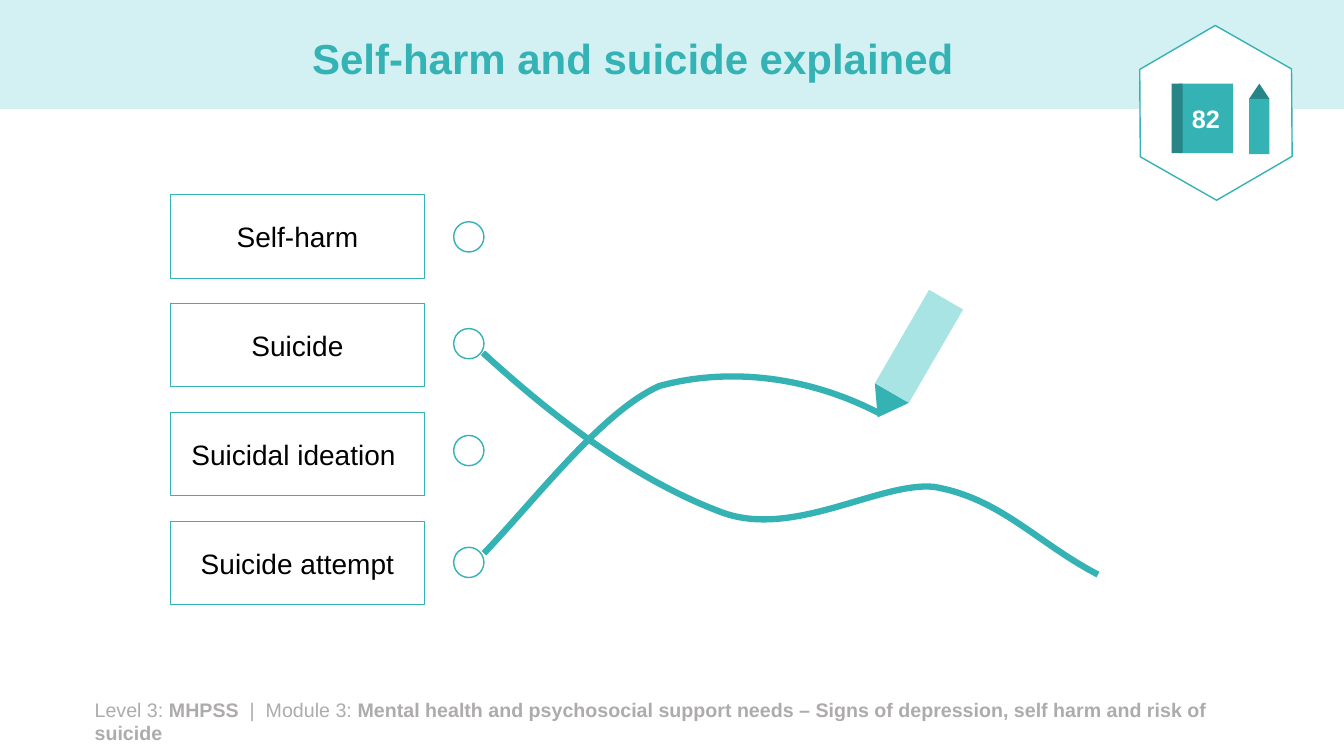
from lxml.etree import SubElement
from pptx import Presentation
from pptx.dml.color import RGBColor
from pptx.enum.shapes import MSO_SHAPE
from pptx.enum.text import MSO_ANCHOR, PP_ALIGN
from pptx.oxml.ns import qn
from pptx.util import Pt

PX = 9144  # 100 px to the inch
TEAL = RGBColor(0x35, 0xB2, 0xB4)
DARK_TEAL = RGBColor(0x27, 0x85, 0x87)
LIGHT_TEAL = RGBColor(0xA9, 0xE4, 0xE5)
PALE_TEAL = RGBColor(0xD3, 0xF1, 0xF2)
GRAY = RGBColor(0xAE, 0xAB, 0xAB)
WHITE = RGBColor(0xFF, 0xFF, 0xFF)
BLACK = RGBColor(0, 0, 0)


def add_outline(container, kind, left, top, width, height, fill=None, line=None, rotation=0):
    """Add a preset shape; line is its width in points, drawn in teal."""
    shape = container.shapes.add_shape(kind, left * PX, top * PX, width * PX, height * PX)
    shape.shadow.inherit = False
    shape.rotation = rotation
    if fill is None:
        shape.fill.background()
    else:
        shape.fill.solid()
        shape.fill.fore_color.rgb = fill
    if line is None:
        shape.line.fill.background()
    else:
        shape.line.color.rgb = TEAL
        shape.line.width = Pt(line)
    return shape


def write_text(shape, *runs, size, color, align=PP_ALIGN.CENTER, anchor=MSO_ANCHOR.MIDDLE, spacing=None):
    """Write (text, bold) runs as one paragraph."""
    frame = shape.text_frame
    frame.word_wrap = True
    frame.vertical_anchor = anchor
    paragraph = frame.paragraphs[0]
    paragraph.alignment = align
    paragraph.line_spacing = spacing
    for text, bold in runs:
        run = paragraph.add_run()
        run.text = text
        run.font.name = "Arial"
        run.font.size = Pt(size)
        run.font.bold = bold
        run.font.color.rgb = color


presentation = Presentation()
presentation.slide_width = 1333 * PX
presentation.slide_height = 750 * PX
slide = presentation.slides.add_slide(presentation.slide_layouts[6])

# Header band, footer and title
add_outline(slide, MSO_SHAPE.RECTANGLE, 0, 0, 1333, 108, fill=PALE_TEAL)
footer = slide.shapes.add_textbox(84 * PX, 687 * PX, 1135 * PX, 57 * PX)
write_text(
    footer,
    ("Level 3: ", False),
    ("MHPSS", True),
    ("  |  Module 3: ", False),
    ("Mental health and psychosocial support needs – Signs of depression, self harm and risk of suicide", True),
    size=14, color=GRAY, align=PP_ALIGN.LEFT, anchor=MSO_ANCHOR.TOP,
)
title = slide.shapes.add_textbox(53 * PX, 13 * PX, 1150 * PX, 95 * PX)
write_text(title, ("Self-harm and suicide explained", True), size=30, color=TEAL, spacing=0.9)

# Terms to match
terms = slide.shapes.add_group_shape()
for row, term in enumerate(["Self-harm", "Suicide", "Suicidal ideation ", "Suicide attempt"]):
    box = add_outline(terms, MSO_SHAPE.RECTANGLE, 169, 193 + 108 * row, 252, 83, line=0.75)
    write_text(box, (term, False), size=20, color=BLACK)

# Drawing pencil
pencil = slide.shapes.add_group_shape()
add_outline(pencil, MSO_SHAPE.ISOSCELES_TRIANGLE, 858, 388, 39, 28, fill=TEAL, rotation=210.1)
add_outline(pencil, MSO_SHAPE.RECTANGLE, 892, 290, 39, 107, fill=LIGHT_TEAL, rotation=210.1)

# Starting points of the matching lines
for top in (220, 326, 432, 543):
    add_outline(slide, MSO_SHAPE.OVAL, 450, top, 30, 30, fill=WHITE, line=1)

# Matching lines: a start, then two control points and an end for each curve
matching_lines = [
    [(479, 350), (560, 424), (636, 478), (715, 508), (786, 535), (872, 478), (926, 483),
     (992, 494), (1029, 539), (1089, 570)],
    [(480, 549), (535, 491), (598, 408), (654, 383), (716, 366), (795, 370), (872, 410)],
]
for start, *points in matching_lines:
    builder = slide.shapes.build_freeform(*start, scale=PX)
    builder.add_line_segments(points, close=False)
    curve = builder.convert_to_shape()
    curve.shadow.inherit = False
    curve.fill.background()
    curve.line.color.rgb = TEAL
    curve.line.width = Pt(4.5)
    outline = next(curve.element.iter(qn("a:path")))
    segments = outline.findall(qn("a:lnTo"))
    for first in range(0, len(segments), 3):
        bezier = SubElement(outline, qn("a:cubicBezTo"))
        for segment in segments[first:first + 3]:
            bezier.append(segment[0])
            outline.remove(segment)

# Page badge with workbook and pencil
badge = slide.shapes.add_group_shape()
hexagon = add_outline(badge, MSO_SHAPE.HEXAGON, 1119, 37, 174, 150, fill=WHITE, line=1, rotation=29.7)
hexagon.adjustments[0] = 0.29
hexagon.adjustments[1] = 1.155
book = add_outline(badge, MSO_SHAPE.RECTANGLE, 1169, 83, 54, 69, fill=TEAL)
write_text(book, ("82", True), size=18, color=WHITE)
add_outline(badge, MSO_SHAPE.RECTANGLE, 1162, 83, 11, 69, fill=DARK_TEAL)
add_outline(badge, MSO_SHAPE.ISOSCELES_TRIANGLE, 1239, 83, 20, 15, fill=DARK_TEAL)
add_outline(badge, MSO_SHAPE.RECTANGLE, 1239, 98, 20, 55, fill=TEAL)

presentation.save("out.pptx")
